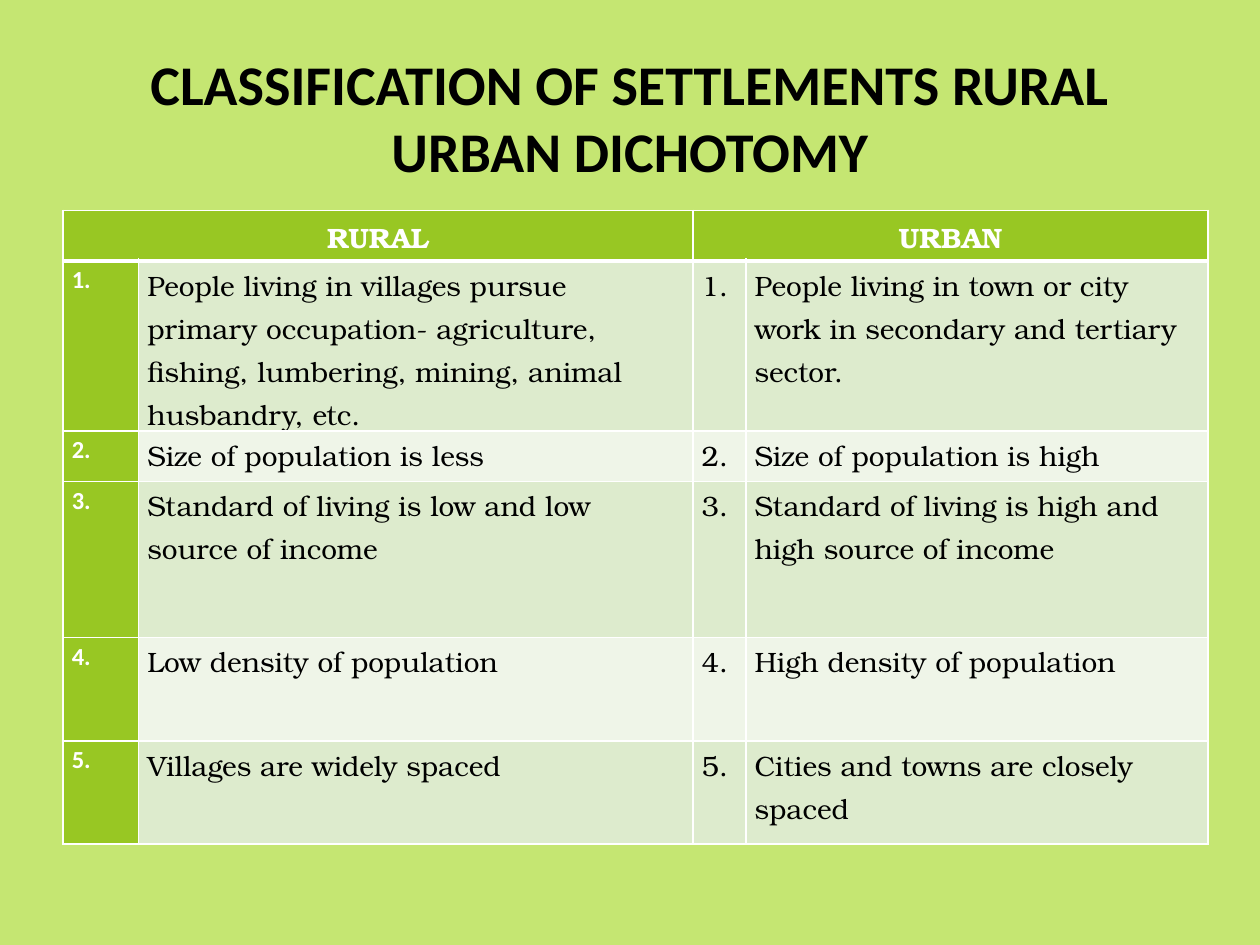
from lxml.etree import SubElement as Sub
from pptx import Presentation
from pptx.dml.color import RGBColor as Rgb
from pptx.enum.text import MSO_ANCHOR as Anchor, PP_ALIGN as Align
from pptx.oxml.ns import qn
from pptx.util import Inches, Pt

BACK = Rgb(0xC5, 0xE6, 0x72)
GREEN = Rgb(0x98, 0xC7, 0x23)
PALE = Rgb(0xDD, 0xEB, 0xCD)
LIGHT = Rgb(0xEF, 0xF5, 0xE8)
WHITE = Rgb(0xFF, 0xFF, 0xFF)
BLACK = Rgb(0x00, 0x00, 0x00)

GRID = 100, 75
COLS = 6, 44, 4.2, 36.7
ROWS = 4, 13.5, 4, 12.4, 8.2, 8.2

TITLE = {"name": "Calibri", "size": Pt(32), "bold": True, "color": BLACK}
HEAD = {"name": "TeX Gyre Bonum", "size": Pt(16), "bold": True, "color": WHITE}
BODY = {**HEAD, "bold": False, "color": BLACK}
MARK = {**HEAD, "name": "Calibri", "size": Pt(14)}
INSET = {"margin_left": Inches(0.07), "margin_right": Inches(0.07),
         "margin_top": 0, "margin_bottom": 0}

PAIRS = [
    ("People living in villages pursue primary occupation- agriculture, "
     "fishing, lumbering, mining, animal husbandry, etc.",
     "People living in town or city work in secondary and tertiary sector."),
    ("Size of population is less", "Size of population is high"),
    ("Standard of living is low and low source of income",
     "Standard of living is high and high source of income"),
    ("Low density of population", "High density of population"),
    ("Villages are widely spaced", "Cities and towns are closely spaced"),
]


def put(obj, vals):
    for key, val in vals.items():
        setattr(obj, key, val)


def write(par, text, form, align=Align.LEFT, space=1.0):
    put(par, {"alignment": align, "line_spacing": space})
    run = par.add_run()
    run.text = text
    put(run.font, {k: v for k, v in form.items() if k != "color"})
    run.font.color.rgb = form["color"]


def edge(cell, foot=1):
    props = cell._tc.get_or_add_tcPr()
    for side, width in zip("LRTB", (1, 1, 1, foot)):
        line = Sub(props, qn(f"a:ln{side}"), w=str(Pt(width)))
        Sub(Sub(line, qn("a:solidFill")), qn("a:srgbClr"), val=str(WHITE))


def paint(cell, text, form, fill, align=Align.LEFT, foot=1):
    put(cell, INSET)
    edge(cell, foot)
    cell.fill.solid()
    cell.fill.fore_color.rgb = fill
    if text:
        write(cell.text_frame.paragraphs[0], text, form, align, 1.15)


def title(slide, box):
    frame = slide.shapes.add_textbox(*box).text_frame
    put(frame, {"word_wrap": True, "vertical_anchor": Anchor.MIDDLE})
    write(frame.paragraphs[0],
          "CLASSIFICATION OF SETTLEMENTS RURAL URBAN DICHOTOMY",
          TITLE, Align.CENTER)


def table(slide, box):
    grid = slide.shapes.add_table(len(ROWS), len(COLS), *box).table
    for col, part in zip(grid.columns, COLS):
        col.width = int(box[2] * part / sum(COLS))
    for row, part in zip(grid.rows, ROWS):
        row.height = int(box[3] * part / sum(ROWS))
    for col, text in enumerate(("RURAL", "", "URBAN", "")):
        paint(grid.cell(0, col), text, HEAD, GREEN, Align.CENTER, 3)
    for col in (0, 2):
        grid.cell(0, col).merge(grid.cell(0, col + 1))
    for row, (rural, urban) in enumerate(PAIRS, 1):
        mark = f"{row}."
        fill = PALE if row % 2 else LIGHT
        paint(grid.cell(row, 0), mark, MARK, GREEN)
        for col, text in enumerate((rural, mark, urban), 1):
            paint(grid.cell(row, col), text, BODY, fill)


def main():
    deck = Presentation()
    put(deck, {"slide_width": Inches(10), "slide_height": Inches(7.5)})
    slide = deck.slides.add_slide(deck.slide_layouts[6])
    slide.background.fill.solid()
    slide.background.fill.fore_color.rgb = BACK
    col, row = deck.slide_width / GRID[0], deck.slide_height / GRID[1]

    def area(x, y, w, h):
        return int(x * col), int(y * row), int(w * col), int(h * row)

    title(slide, area(5, 3, 90, 12.5))
    table(slide, area(5, 16.7, sum(COLS), sum(ROWS)))
    deck.save("out.pptx")


if __name__ == "__main__":
    main()
